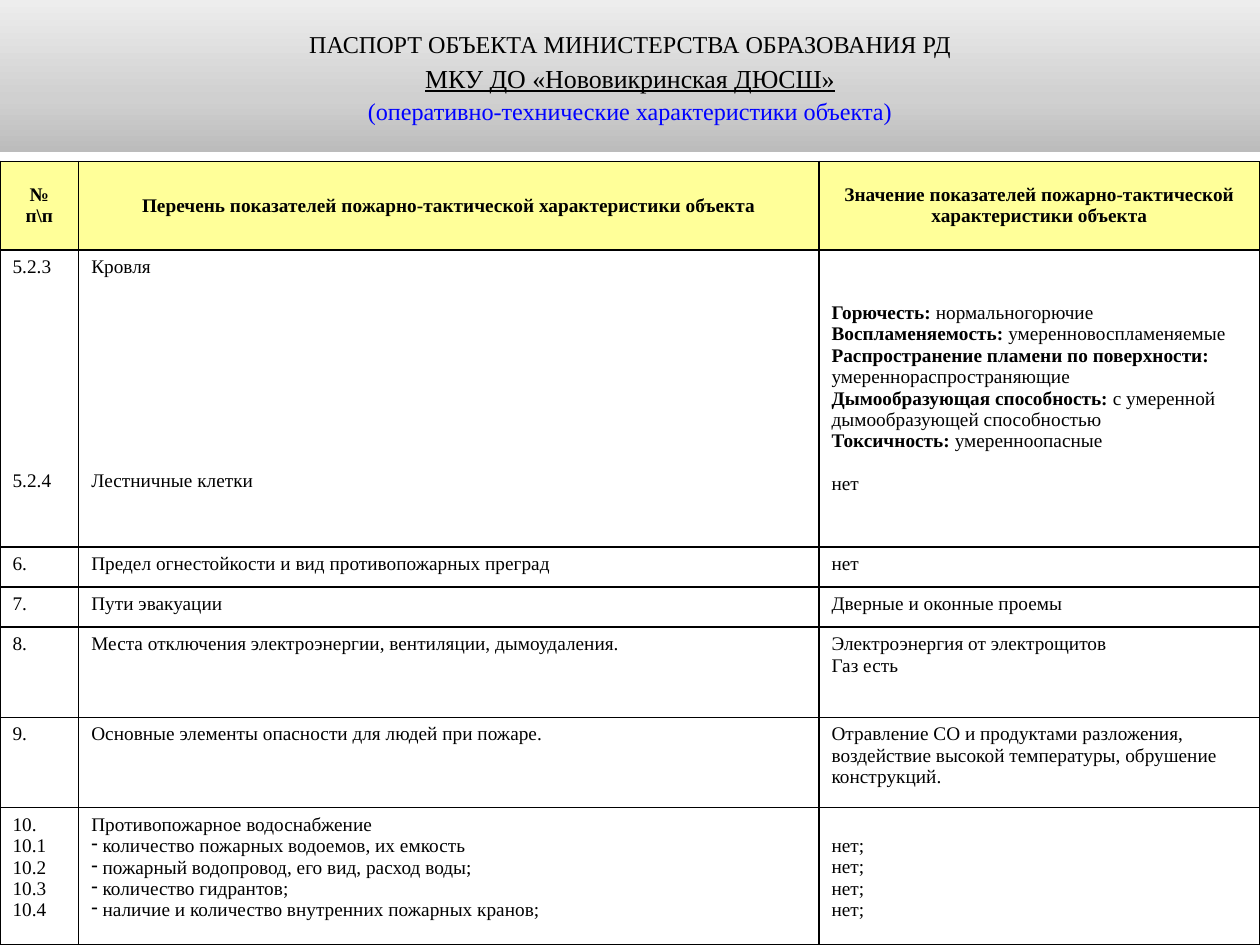
from copy import deepcopy
from dataclasses import dataclass

from lxml.etree import SubElement
from pptx import Presentation
from pptx.dml.color import RGBColor
from pptx.enum.shapes import MSO_SHAPE
from pptx.enum.text import MSO_ANCHOR, PP_ALIGN
from pptx.oxml.ns import qn
from pptx.util import Pt


@dataclass(frozen=True)
class Theme:
    font: str = "Times New Roman"
    black: str = "000000"
    blue: str = "0000FF"
    white: str = "FFFFFF"
    header: str = "FFFF99"
    gradient: tuple = ((0, "BCBCBC"), (0.35, "D0D0D0"), (1, "EDEDED"))
    title_size: float = 13.8
    name_size: float = 14.8
    table_size: float = 11
    line: float = 12.2  # height of one table line


THEME = Theme()

TITLE = [
    ("ПАСПОРТ ОБЪЕКТА МИНИСТЕРСТВА ОБРАЗОВАНИЯ РД", {"size": THEME.title_size}),
    ("МКУ ДО «Нововикринская ДЮСШ»", {"size": THEME.name_size, "underline": True}),
    ("(оперативно-технические характеристики объекта)",
     {"size": THEME.title_size, "color": THEME.blue}),
]

COLUMN_WIDTHS = [45, 423, 252]
ROW_HEIGHTS = [50.7, 169.7, 22.9, 22.9, 51.6, 51.6, 78.4]

# One string per paragraph; text before "|" is bold, a leading "-" is a bullet
ROWS = [
    [["№", "п\\п"],
     ["Перечень показателей пожарно-тактической характеристики объекта"],
     ["Значение показателей пожарно-тактической характеристики объекта"]],
    [["5.2.3", "5.2.4"],
     ["Кровля", "Лестничные клетки"],
     ["Горючесть: |нормальногорючие",
      "Воспламеняемость: |умеренновоспламеняемые",
      "Распространение пламени по поверхности:|",
      "умереннораспространяющие",
      "Дымообразующая способность: |с умеренной дымообразующей способностью",
      "Токсичность: |умеренноопасные",
      "нет"]],
    [["6."], ["Предел огнестойкости и вид противопожарных преград"], ["нет"]],
    [["7."], ["Пути эвакуации"], ["Дверные и оконные проемы"]],
    [["8."],
     ["Места отключения электроэнергии, вентиляции, дымоудаления."],
     ["Электроэнергия от электрощитов", "Газ есть"]],
    [["9."],
     ["Основные элементы опасности для людей при пожаре."],
     ["Отравление СО и продуктами разложения, воздействие высокой температуры, "
      "обрушение конструкций."]],
    [["10.", "10.1", "10.2", "10.3", "10.4"],
     ["Противопожарное водоснабжение",
      "- количество пожарных водоемов, их емкость",
      "- пожарный водопровод, его вид, расход воды;",
      "- количество гидрантов;",
      "- наличие и количество внутренних пожарных кранов;"],
     ["нет;"] * 4],
]

# Lines left free above the last paragraph, and above the whole text of a cell
LAST_PARA_GAPS = {(1, 0): 9, (1, 1): 9, (1, 2): 1}
TOP_GAPS = {(6, 2): 1}
MIDDLE_CELLS = {(0, 0), (0, 1), (0, 2), (1, 2)}


def set_attributes(target, values):
    for name, value in values.items():
        setattr(target, name, value)


def add_span(para, text, size, color=THEME.black, **style):
    span = para.add_run()
    span.text = text
    set_attributes(span.font, {"name": THEME.font, "size": Pt(size), **style})
    span.font.color.rgb = RGBColor.from_string(color)


def next_para(frame, index):
    return frame.paragraphs[0] if index == 0 else frame.add_paragraph()


def add_title_band(page, left, top, width, height):
    band = page.shapes.add_shape(
        MSO_SHAPE.RECTANGLE, Pt(left), Pt(top), Pt(width), Pt(height))
    band.shadow.inherit = False
    band.line.fill.background()

    # Three-stop gradient running upwards
    band.fill.gradient()
    band.fill.gradient_angle = 90
    stop_list = band._element.spPr.find(".//" + qn("a:gsLst"))
    stop_list.append(deepcopy(stop_list[-1]))
    for stop, (position, color) in zip(band.fill.gradient_stops, THEME.gradient):
        stop.position = position
        stop.color.rgb = RGBColor.from_string(color)

    # Title lines
    frame = band.text_frame
    set_attributes(frame, {
        "word_wrap": True, "vertical_anchor": MSO_ANCHOR.MIDDLE,
        "margin_left": Pt(6), "margin_right": Pt(6),
        "margin_top": Pt(3), "margin_bottom": Pt(3)})
    for index, (text, style) in enumerate(TITLE):
        para = next_para(frame, index)
        set_attributes(para, {"alignment": PP_ALIGN.CENTER, "line_spacing": 1.12})
        add_span(para, text, **style)


def add_borders(cell):
    properties = cell._tc.get_or_add_tcPr()
    for position, side in enumerate(("lnL", "lnR", "lnT", "lnB")):
        border = properties.makeelement(qn("a:" + side), {"w": str(Pt(1))})
        fill = SubElement(border, qn("a:solidFill"))
        SubElement(fill, qn("a:srgbClr"), val=THEME.black)
        properties.insert(position, border)


def add_dash_bullet(para):
    properties = para._p.get_or_add_pPr()
    properties.set("marL", "0")
    properties.set("indent", "0")
    SubElement(properties, qn("a:buChar"), char="-")


def fill_cell(cell, row, column, lines):
    is_header = row == 0
    middle = (row, column) in MIDDLE_CELLS
    set_attributes(cell, {
        "margin_left": Pt(7.2), "margin_right": Pt(7.2),
        "margin_top": Pt(3.6 + TOP_GAPS.get((row, column), 0) * THEME.line),
        "margin_bottom": Pt(3.6),
        "vertical_anchor": MSO_ANCHOR.MIDDLE if middle else MSO_ANCHOR.TOP})
    cell.fill.solid()
    cell.fill.fore_color.rgb = RGBColor.from_string(
        THEME.header if is_header else THEME.white)
    add_borders(cell)

    for index, line in enumerate(lines):
        para = next_para(cell.text_frame, index)
        para.alignment = PP_ALIGN.CENTER if is_header else PP_ALIGN.LEFT
        if index and index == len(lines) - 1 and (row, column) in LAST_PARA_GAPS:
            para.space_before = Pt(LAST_PARA_GAPS[row, column] * THEME.line)
        if line.startswith("-"):
            add_dash_bullet(para)
            line = line[1:]
        lead, _, rest = line.rpartition("|")
        for text, bold in ((lead, True), (rest, is_header)):
            if text:
                add_span(para, text, THEME.table_size, bold=bold)


def add_passport_table(page, left, top, width, height):
    table = page.shapes.add_table(
        len(ROWS), len(COLUMN_WIDTHS), Pt(left), Pt(top), Pt(width), Pt(height)).table
    set_attributes(table, {"first_row": False, "horz_banding": False})
    for column, size in zip(table.columns, COLUMN_WIDTHS):
        column.width = Pt(size)
    for row, size in zip(table.rows, ROW_HEIGHTS):
        row.height = Pt(size)
    for row, cells in enumerate(ROWS):
        for column, lines in enumerate(cells):
            fill_cell(table.cell(row, column), row, column, lines)


def main():
    deck = Presentation()
    set_attributes(deck, {"slide_width": Pt(720), "slide_height": Pt(540)})
    page = deck.slides.add_slide(deck.slide_layouts[6])
    add_passport_table(page, 0, 92.2, 720, sum(ROW_HEIGHTS))
    add_title_band(page, 0, 0, 720, 86.7)
    deck.save("out.pptx")


if __name__ == "__main__":
    main()
